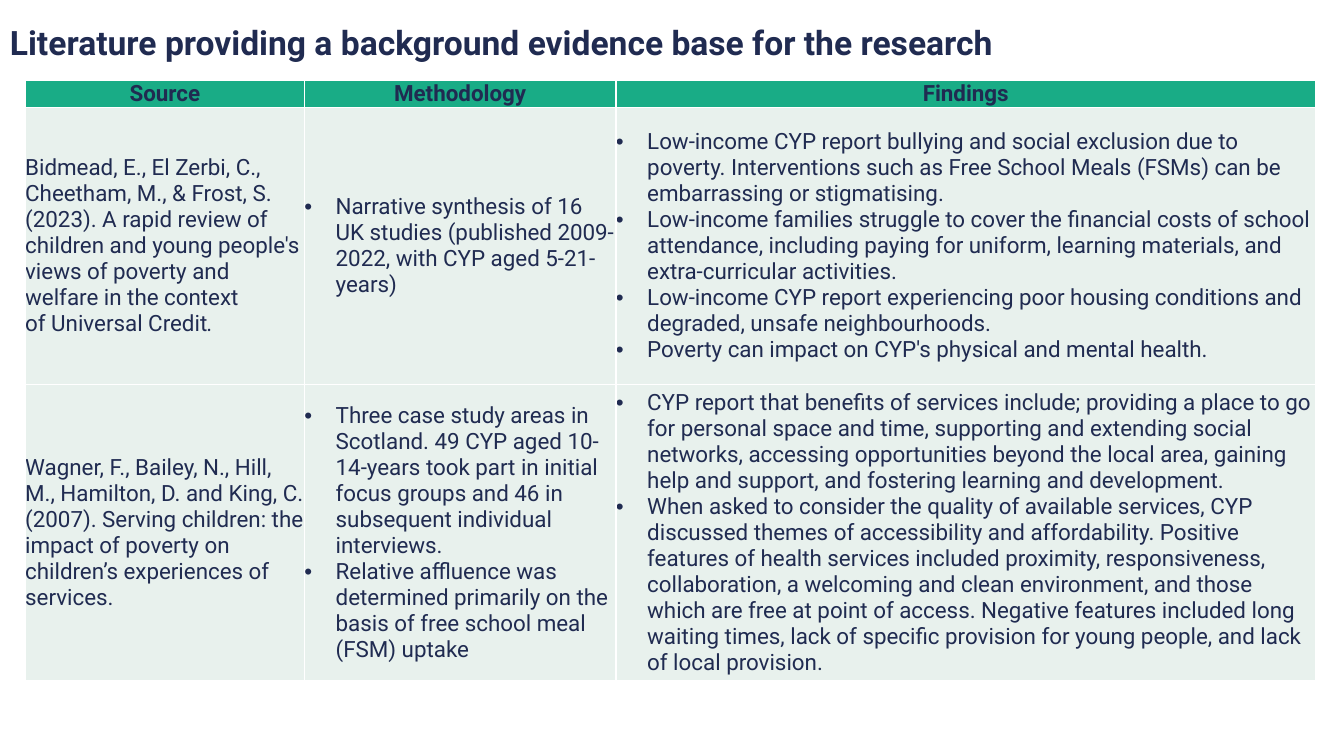
from lxml import etree
from pptx import Presentation
from pptx.dml.color import RGBColor
from pptx.enum import text
from pptx.oxml import ns
from pptx.util import Inches, Pt

FONT = "Roboto"
NAVY = RGBColor(0x20, 0x2B, 0x51)
GREEN = RGBColor(0x19, 0xAC, 0x86)
PALE_GREEN = RGBColor(0xE8, 0xF1, 0xED)
WHITE = RGBColor(0xFF, 0xFF, 0xFF)

TITLE = "Literature providing a background evidence base for the research"
HEADERS = ["Source", "Methodology", "Findings"]
COLUMN_WIDTHS = [2.77, 3.09, 6.94]
ROW_HEIGHTS = [0.26, 2.75, 2.93]

# Each study: source, methodology and findings, as lists of paragraphs
STUDIES = [
    [
        [
            "Bidmead, E., El Zerbi, C., Cheetham, M., & Frost, S. (2023). A rapid review of "
            "children and young people's views of poverty and welfare in the context",
            "of Universal Credit",
        ],
        ["Narrative synthesis of 16 UK studies (published 2009-2022, with CYP aged 5-21-years)"],
        [
            "Low-income CYP report bullying and social exclusion due to poverty. Interventions "
            "such as Free School Meals (FSMs) can be embarrassing or stigmatising.",
            "Low-income families struggle to cover the financial costs of school attendance, "
            "including paying for uniform, learning materials, and extra-curricular activities.",
            "Low-income CYP report experiencing poor housing conditions and degraded, unsafe "
            "neighbourhoods.",
            "Poverty can impact on CYP's physical and mental health.",
        ],
    ],
    [
        [
            "Wagner, F., Bailey, N., Hill, M., Hamilton, D. and King, C. (2007). Serving "
            "children: the impact of poverty on children’s experiences of services.",
        ],
        [
            "Three case study areas in Scotland. 49 CYP aged 10-14-years took part in initial "
            "focus groups and 46 in subsequent individual interviews.",
            "Relative affluence was determined primarily on the basis of free school meal (FSM) "
            "uptake",
        ],
        [
            "CYP report that benefits of services include; providing a place to go for personal "
            "space and time, supporting and extending social networks, accessing opportunities "
            "beyond the local area, gaining help and support, and fostering learning and "
            "development.",
            "When asked to consider the quality of available services, CYP discussed themes of "
            "accessibility and affordability. Positive features of health services included "
            "proximity, responsiveness, collaboration, a welcoming and clean environment, and "
            "those which are free at point of access. Negative features included long waiting "
            "times, lack of specific provision for young people, and lack of local provision.",
        ],
    ],
]


def style_font(font, size, bold=False):
    font.name = FONT
    font.size = Pt(size)
    font.bold = bold
    font.color.rgb = NAVY


def add_bullet(paragraph):
    properties = paragraph._p.get_or_add_pPr()
    properties.set("marL", str(Inches(0.31)))
    properties.set("indent", str(-Inches(0.31)))
    etree.SubElement(properties, ns.qn("a:buFont")).set("typeface", "Arial")
    etree.SubElement(properties, ns.qn("a:buChar")).set("char", "•")


def add_borders(cell):
    # Borders must come before the fill in the cell properties
    properties = cell._tc.get_or_add_tcPr()
    for position, side in enumerate(["lnL", "lnR", "lnT", "lnB"]):
        line = etree.Element(ns.qn(f"a:{side}"), w=str(Pt(1)))
        fill = etree.SubElement(line, ns.qn("a:solidFill"))
        etree.SubElement(fill, ns.qn("a:srgbClr")).set("val", str(WHITE))
        properties.insert(position, line)


def fill_cell(cell, paragraphs, color, header=False, bulleted=False):
    cell.margin_left = cell.margin_right = cell.margin_top = cell.margin_bottom = 0
    cell.vertical_anchor = text.MSO_ANCHOR.MIDDLE
    cell.fill.solid()
    cell.fill.fore_color.rgb = color
    add_borders(cell)
    cell.text_frame.text = "\n".join(paragraphs)
    for paragraph in cell.text_frame.paragraphs:
        if bulleted:
            add_bullet(paragraph)
        paragraph.alignment = text.PP_ALIGN.CENTER if header else text.PP_ALIGN.LEFT
        for run in paragraph.runs:
            style_font(run.font, 16, bold=header)


def add_title(slide):
    box = slide.shapes.add_textbox(0, Inches(0.17), Inches(13.33), Inches(0.5))
    box.text_frame.word_wrap = True
    box.text_frame.text = TITLE
    style_font(box.text_frame.paragraphs[0].runs[0].font, 24, bold=True)


def add_literature_table(slide):
    frame = slide.shapes.add_table(
        len(ROW_HEIGHTS), len(COLUMN_WIDTHS), Inches(0.25), Inches(0.8),
        Inches(sum(COLUMN_WIDTHS)), Inches(sum(ROW_HEIGHTS)))
    table = frame.table
    for column, width in zip(table.columns, COLUMN_WIDTHS):
        column.width = Inches(width)
    for row, height in zip(table.rows, ROW_HEIGHTS):
        row.height = Inches(height)

    # Header row
    for column, header in enumerate(HEADERS):
        fill_cell(table.cell(0, column), [header], GREEN, header=True)

    # One row per study; every column after the source is bulleted
    for row, study in enumerate(STUDIES, start=1):
        for column, paragraphs in enumerate(study):
            fill_cell(table.cell(row, column), paragraphs, PALE_GREEN, bulleted=column > 0)

    # The first source closes with an italic full stop
    full_stop = table.cell(1, 0).text_frame.paragraphs[-1].add_run()
    full_stop.text = "."
    style_font(full_stop.font, 16)
    full_stop.font.italic = True


def main():
    presentation = Presentation()
    presentation.slide_width = Inches(13.33)
    presentation.slide_height = Inches(7.5)
    slide = presentation.slides.add_slide(presentation.slide_layouts[6])
    add_title(slide)
    add_literature_table(slide)
    presentation.save("out.pptx")


if __name__ == "__main__":
    main()
